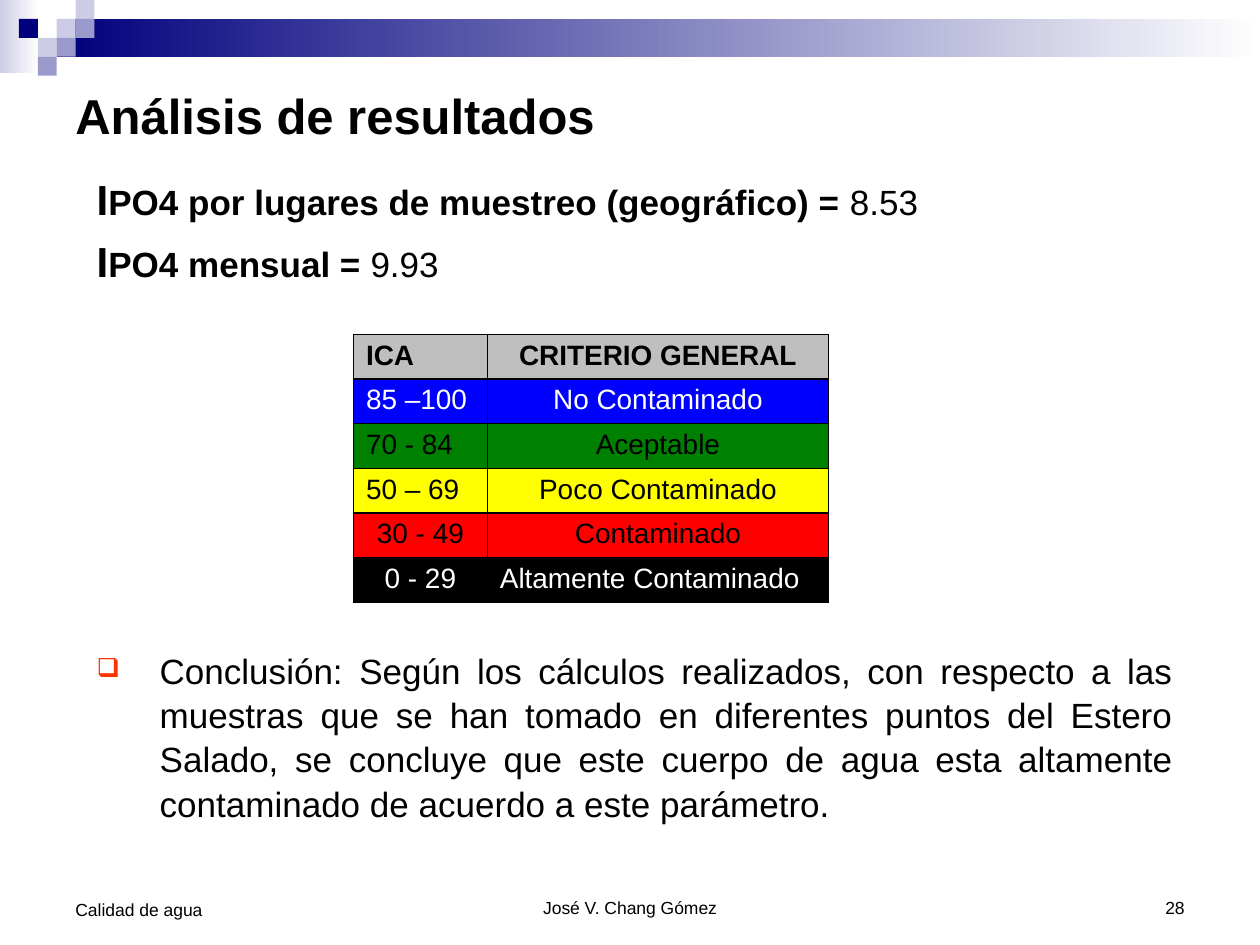
from lxml import etree
from pptx import Presentation
from pptx.dml.color import RGBColor
from pptx.enum.shapes import MSO_SHAPE
from pptx.enum.text import MSO_ANCHOR, PP_ALIGN
from pptx.oxml.ns import qn
from pptx.util import Pt

RECTANGLE = MSO_SHAPE.RECTANGLE
LEFT, CENTER, RIGHT, JUSTIFY = PP_ALIGN.LEFT, PP_ALIGN.CENTER, PP_ALIGN.RIGHT, PP_ALIGN.JUSTIFY
TOP, MIDDLE, BOTTOM = MSO_ANCHOR.TOP, MSO_ANCHOR.MIDDLE, MSO_ANCHOR.BOTTOM

BLACK, WHITE = "000000", "FFFFFF"
NAVY, LILAC, LAVENDER = "00007D", "9999CC", "CCCCE6"
UNIT = 10.8  # side of a decorative square


def color(value):
    return RGBColor.from_string(value)


class SlideBuilder:
    font = "Arial"

    def __init__(self, slide):
        self.slide = slide

    def rectangle(self, left, top, width, height, *colors):
        """One colour gives a solid fill, two a left-to-right gradient."""
        shape = self.slide.shapes.add_shape(RECTANGLE, Pt(left), Pt(top), Pt(width), Pt(height))
        shape.shadow.inherit = False
        shape.line.fill.background()
        if len(colors) == 1:
            shape.fill.solid()
            shape.fill.fore_color.rgb = color(colors[0])
        else:
            shape.fill.gradient()
            shape.fill.gradient_angle = 0
            for stop, value in zip(shape.fill.gradient_stops, colors):
                stop.color.rgb = color(value)

    def run(self, paragraph, text, size, bold=False, ink=BLACK):
        run = paragraph.add_run()
        run.text = text
        run.font.name = self.font
        run.font.size = Pt(size)
        run.font.bold = bold
        run.font.color.rgb = color(ink)

    def text_box(self, left, top, width, height, anchor=TOP):
        box = self.slide.shapes.add_textbox(Pt(left), Pt(top), Pt(width), Pt(height))
        frame = box.text_frame
        frame.word_wrap = True
        frame.vertical_anchor = anchor
        return frame

    def label(self, left, top, width, height, text, size, align=LEFT, anchor=BOTTOM, bold=False):
        paragraph = self.text_box(left, top, width, height, anchor).paragraphs[0]
        paragraph.alignment = align
        self.run(paragraph, text, size, bold)

    def bullet(self, paragraph, character, ink, percent):
        properties = paragraph._p.get_or_add_pPr()
        properties.set("marL", str(Pt(36)))
        properties.set("indent", str(Pt(-36)))
        bullet_color = etree.SubElement(properties, qn("a:buClr"))
        etree.SubElement(bullet_color, qn("a:srgbClr"), val=ink)
        etree.SubElement(properties, qn("a:buSzPct"), val=str(percent * 1000))
        etree.SubElement(properties, qn("a:buChar"), char=character)

    def border(self, cell, ink, width):
        properties = cell._tc.get_or_add_tcPr()
        for position, side in enumerate(("a:lnL", "a:lnR", "a:lnT", "a:lnB")):
            line = etree.Element(qn(side), w=str(Pt(width)))
            fill = etree.SubElement(line, qn("a:solidFill"))
            etree.SubElement(fill, qn("a:srgbClr"), val=ink)
            properties.insert(position, line)

    def table(self, left, top, widths, row_height, rows):
        """Each row: two texts, their alignments, fill, ink."""
        shape = self.slide.shapes.add_table(
            len(rows), len(widths), Pt(left), Pt(top), Pt(sum(widths)), Pt(row_height * len(rows)))
        table = shape.table
        table.horz_banding = False
        for column, width in zip(table.columns, widths):
            column.width = Pt(width)
        for row_index, (texts, aligns, fill, ink) in enumerate(rows):
            table.rows[row_index].height = Pt(row_height)
            for column_index, (text, align) in enumerate(zip(texts, aligns)):
                cell = table.cell(row_index, column_index)
                cell.margin_top = cell.margin_bottom = Pt(3.2)
                cell.fill.solid()
                cell.fill.fore_color.rgb = color(fill)
                paragraph = cell.text_frame.paragraphs[0]
                paragraph.alignment = align
                self.run(paragraph, text, 16, row_index == 0, ink)
                self.border(cell, BLACK, 1)


def main():
    presentation = Presentation()
    presentation.slide_width, presentation.slide_height = Pt(720), Pt(540)
    builder = SlideBuilder(presentation.slides.add_slide(presentation.slide_layouts[6]))

    # Header band and squares, placed by grid column and row
    builder.rectangle(0, 0, 22, 42, LAVENDER, WHITE)
    builder.rectangle(3 * UNIT, UNIT, 720 - 3 * UNIT, 2 * UNIT, NAVY, WHITE)
    for column, row, fill in (
        (3, 1, LAVENDER), (4, 0, LAVENDER), (4, 1, LILAC), (2, 2, LAVENDER),
        (1, 1, NAVY), (3, 2, LILAC), (2, 3, LILAC),
    ):
        builder.rectangle(column * UNIT, row * UNIT, UNIT, UNIT, fill)

    # Footer
    builder.label(246, 492, 228, 36, "José V. Chang Gómez", 10, CENTER)
    builder.label(516, 492, 168, 36, "28", 10, RIGHT)
    builder.label(36, 492, 168, 37.5, "Calidad de agua", 10)

    # Title
    builder.label(36, 43.2, 648, 45.4, "Análisis de resultados", 28, anchor=MIDDLE, bold=True)

    # Index values
    body = builder.text_box(48.2, 94.3, 629.3, 402.5)
    paragraph = body.paragraphs[0]
    for name, value in (
        ("PO4 por lugares de muestreo (geográfico) = ", "8.53"),
        ("PO4 mensual = ", "9.93"),
    ):
        paragraph.line_spacing = 1.05
        paragraph.space_before = Pt(4.8)
        builder.run(paragraph, "I", 24, True)
        builder.run(paragraph, name, 20, True)
        builder.run(paragraph, value, 20)
        paragraph = body.add_paragraph()

    # Conclusion, set below the table
    paragraph.alignment = JUSTIFY
    paragraph.line_spacing = 1.05
    paragraph.space_before = Pt(207)
    builder.bullet(paragraph, "❑", "FF3300", 75)
    builder.run(
        paragraph,
        "Conclusión: Según los cálculos realizados, con respecto a las muestras que se han "
        "tomado en diferentes puntos del Estero Salado, se concluye que este cuerpo de agua "
        "esta altamente contaminado de acuerdo a este parámetro.", 20)

    # Quality scale
    builder.table(202, 191, (76.5, 195), 25, (
        (("ICA", "CRITERIO GENERAL"), (LEFT, CENTER), "BFBFBF", BLACK),
        (("85 –100", "No Contaminado"), (LEFT, CENTER), "0000FF", WHITE),
        (("70 - 84", "Aceptable"), (LEFT, CENTER), "008000", BLACK),
        (("50 – 69", "Poco Contaminado"), (LEFT, CENTER), "FFFF00", BLACK),
        (("30 - 49", "Contaminado"), (CENTER, CENTER), "FF0000", BLACK),
        (("0 - 29", "Altamente Contaminado"), (CENTER, LEFT), BLACK, WHITE),
    ))

    presentation.save("out.pptx")


if __name__ == "__main__":
    main()
